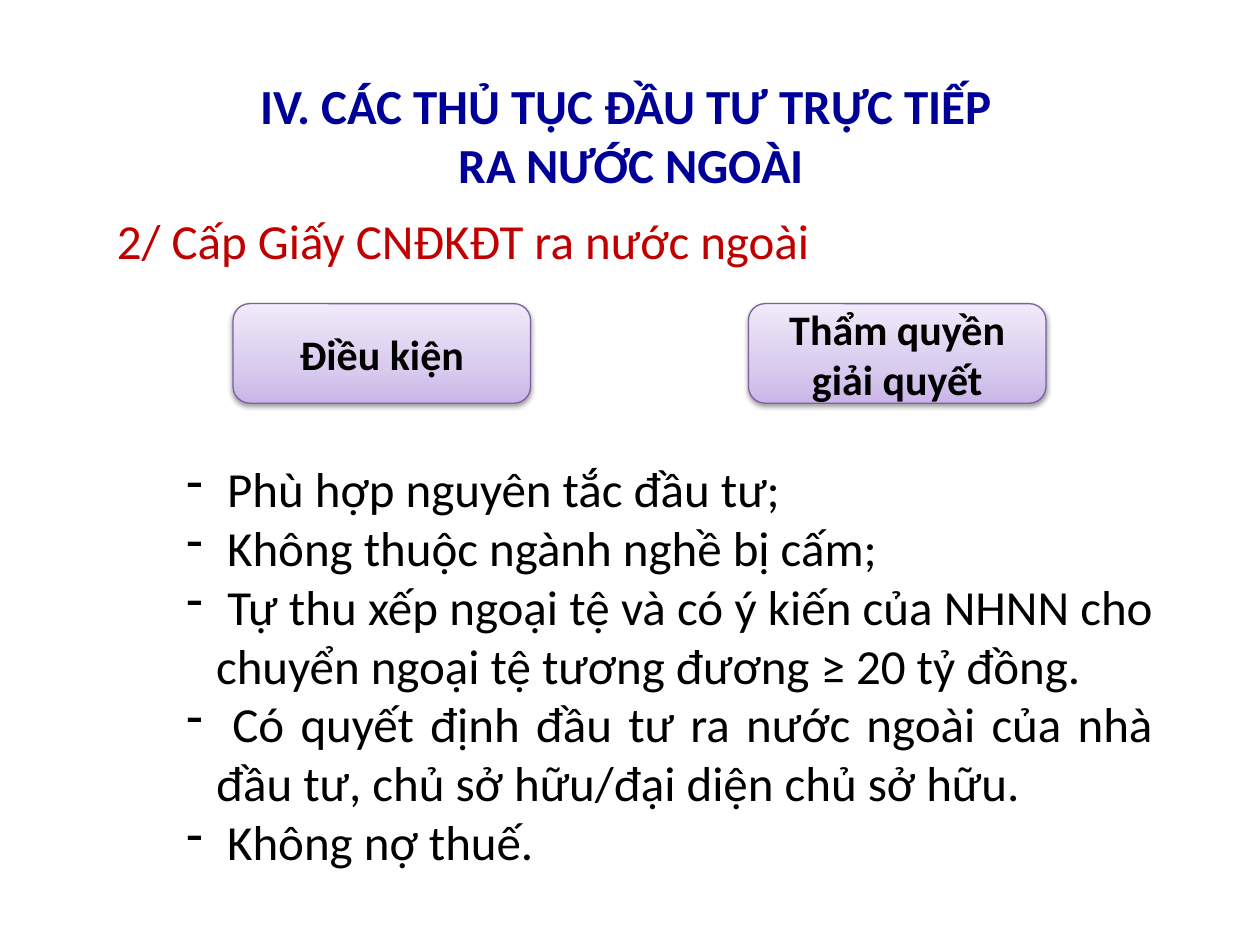
import copy

import pptx
import pptx.dml.color
import pptx.enum.shapes
import pptx.enum.text
import pptx.oxml
import pptx.oxml.ns
import pptx.util

Pt = pptx.util.Pt
RGBColor = pptx.dml.color.RGBColor
ALIGN = pptx.enum.text.PP_ALIGN
ANCHOR = pptx.enum.text.MSO_ANCHOR

NAVY = RGBColor(0x00, 0x00, 0x99)
RED = RGBColor(0xC0, 0x00, 0x00)
BLACK = RGBColor(0x00, 0x00, 0x00)
PURPLE = RGBColor(0x7D, 0x60, 0xA0)
LILAC_DARK = RGBColor(0xC9, 0xB5, 0xE8)
LILAC_MIDDLE = RGBColor(0xD8, 0xCB, 0xEE)
LILAC_LIGHT = RGBColor(0xF0, 0xEA, 0xF9)
GRADIENT = [(0, LILAC_DARK), (0.35, LILAC_MIDDLE), (1, LILAC_LIGHT)]

TITLE = "IV. CÁC THỦ TỤC ĐẦU TƯ TRỰC TIẾP \vRA NƯỚC NGOÀI"
SUBTITLE = "2/ Cấp Giấy CNĐKĐT ra nước ngoài"
TOPICS = ["Điều kiện", "Thẩm quyền giải quyết"]
CONDITIONS = [
    " Phù hợp nguyên tắc đầu tư;",
    " Không thuộc ngành nghề bị cấm;",
    " Tự thu xếp ngoại tệ và có ý kiến của NHNN cho chuyển ngoại tệ tương đương ≥ 20 tỷ đồng.",
    " Có quyết định đầu tư ra nước ngoài của nhà đầu tư, chủ sở hữu/đại diện chủ sở hữu.",
    " Không nợ thuế.",
]


def add_bullet(paragraph, character, indent):
    properties = paragraph._p.get_or_add_pPr()
    properties.set("marL", str(Pt(indent)))
    properties.set("indent", str(-Pt(indent)))
    bullet = pptx.oxml.parse_xml(
        f'<a:buChar {pptx.oxml.ns.nsdecls("a")} char="{character}"/>'
    )
    properties.append(bullet)


def write_text(shape, text, size=28, color=BLACK, bold=False,
               align=ALIGN.LEFT, anchor=ANCHOR.TOP, bullet=None):
    frame = shape.text_frame
    frame.word_wrap = True
    frame.vertical_anchor = anchor
    lines = [text] if isinstance(text, str) else text
    for index, line in enumerate(lines):
        paragraph = frame.add_paragraph() if index else frame.paragraphs[0]
        paragraph.text = line
        paragraph.alignment = align
        if bullet:
            add_bullet(paragraph, bullet, 17)
        for run in paragraph.runs:
            run.font.name = "Calibri"
            run.font.size = Pt(size)
            run.font.bold = bold
            run.font.color.rgb = color


def add_text_box(slide, box, text, **style):
    shape = slide.shapes.add_textbox(*map(Pt, box))
    write_text(shape, text, **style)


def fill_gradient(shape):
    shape.fill.gradient()
    shape.fill.gradient_angle = 90
    stops = shape.fill.gradient_stops
    first_stop = stops[0]._gs
    first_stop.addnext(copy.deepcopy(first_stop))
    for stop, (position, color) in zip(shape.fill.gradient_stops, GRADIENT):
        stop.position = position
        stop.color.rgb = color


def add_shadow(shape):
    shape.shadow.inherit = False
    effects = shape._element.spPr.find(pptx.oxml.ns.qn("a:effectLst"))
    effects.append(pptx.oxml.parse_xml(
        f'<a:outerShdw {pptx.oxml.ns.nsdecls("a")} blurRad="{Pt(3.1)}" '
        f'dist="{Pt(1.6)}" dir="5400000" rotWithShape="0">'
        '<a:srgbClr val="000000"><a:alpha val="38000"/></a:srgbClr>'
        '</a:outerShdw>'
    ))


def add_topics(slide, box):
    left, top, width, height = box
    topic_width = 170
    step = (width - topic_width) / (len(TOPICS) - 1)
    for index, topic in enumerate(TOPICS):
        shape = slide.shapes.add_shape(
            pptx.enum.shapes.MSO_SHAPE.ROUNDED_RECTANGLE,
            Pt(left + index * step), Pt(top), Pt(topic_width), Pt(height),
        )
        fill_gradient(shape)
        shape.line.color.rgb = PURPLE
        shape.line.width = Pt(0.75)
        add_shadow(shape)
        write_text(shape, topic, size=24, bold=True,
                   align=ALIGN.CENTER, anchor=ANCHOR.MIDDLE)


def add_heading(slide, box):
    left, top, width, height = box
    add_text_box(slide, (left, top, width, 90), TITLE, color=NAVY, bold=True,
                 align=ALIGN.CENTER, anchor=ANCHOR.MIDDLE)
    add_text_box(slide, (left + 23, top + 85, width - 24, height - 85),
                 SUBTITLE, color=RED)


def add_conditions(slide, box):
    add_text_box(slide, box, CONDITIONS, align=ALIGN.JUSTIFY, bullet="-")


def main():
    presentation = pptx.Presentation()
    presentation.slide_width = Pt(720)
    presentation.slide_height = Pt(540)
    slide = presentation.slides.add_slide(presentation.slide_layouts[6])
    add_heading(slide, (36.7, 31.7, 648, 126))
    add_topics(slide, (133.2, 173.5, 464.5, 56.9))
    add_conditions(slide, (99.4, 258.5, 566.6, 244.8))
    presentation.save("out.pptx")


if __name__ == "__main__":
    main()
